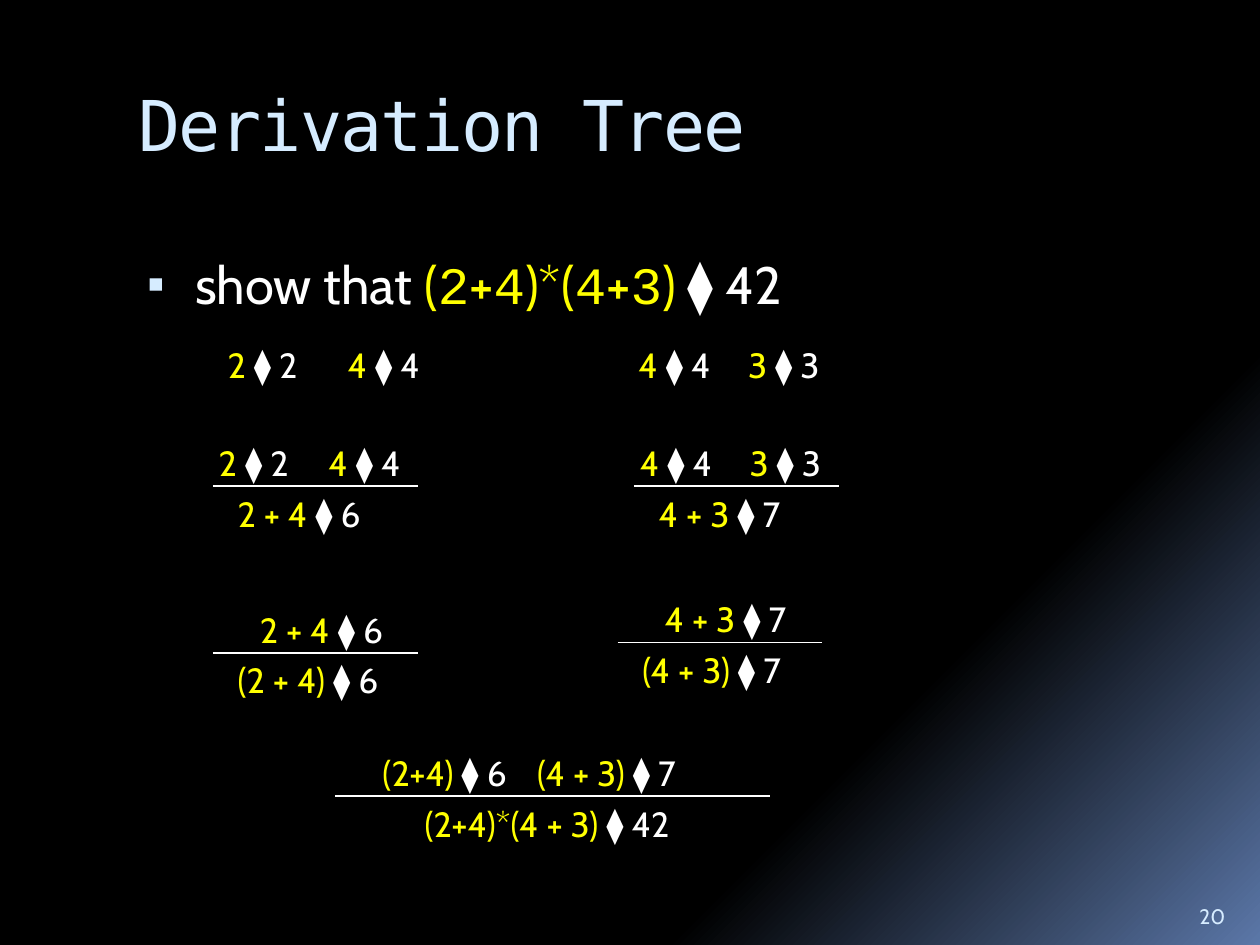
from dataclasses import dataclass
from itertools import groupby

from lxml import etree
from pptx import Presentation
from pptx import util as u
from pptx.dml.color import RGBColor
from pptx.enum import shapes, text
from pptx.oxml.ns import qn


@dataclass(frozen=True)
class Theme:
    ink: str = "FFFFFF"
    source: str = "FFFF00"
    accent: str = "D6ECFF"
    dark: str = "000000"
    glow: str = "5B77A8"
    body_font: str = "Cabin"
    title_font: str = "DejaVu Sans Mono"
    digit_font: str = "Courier New"
    title_size: int = 40
    body_size: int = 30
    rule_size: int = 20
    number_size: int = 12
    bar_width: float = 0.94


class DerivationSlide:
    def __init__(self, deck, theme):
        self.theme = theme
        self.slide = deck.slides.add_slide(deck.slide_layouts[1])

    def background(self):
        fill = self.slide.background.fill
        fill.gradient()
        fill.gradient_angle = 315
        stops = zip(fill.gradient_stops, (0.73, 1), (self.theme.dark, self.theme.glow))
        for stop, position, color in stops:
            stop.position = position
            stop.color.rgb = RGBColor.from_string(color)

    def run(self, paragraph, words, size, color, font=None):
        run = paragraph.add_run()
        run.text = words
        run.font.size = u.Pt(size)
        run.font.name = font or self.theme.body_font
        run.font.color.rgb = RGBColor.from_string(color)
        return run

    def frame(self, shape, anchor=text.MSO_ANCHOR.TOP):
        """Prepare a shape's text frame and return its first paragraph."""
        frame = shape.text_frame
        frame.word_wrap = True
        frame.auto_size = text.MSO_AUTO_SIZE.NONE
        frame.vertical_anchor = anchor
        paragraph = frame.paragraphs[0]
        paragraph.alignment = text.PP_ALIGN.LEFT
        return paragraph

    def place(self, shape, left, top, width, height):
        shape.left, shape.top = u.Cm(left), u.Cm(top)
        shape.width, shape.height = u.Cm(width), u.Cm(height)

    def title(self, words):
        heading = self.slide.shapes.title
        self.place(heading, 2.54, 1.42, 21.59, 2.54)
        paragraph = self.frame(heading)
        heading.text_frame.margin_top = u.Cm(0.23)
        run = self.run(paragraph, words, self.theme.title_size,
                       self.theme.accent, self.theme.title_font)
        run.font._element.set("spc", "-100")

    def goal(self, lead, expression, value):
        theme = self.theme
        body = self.slide.placeholders[1]
        self.place(body, 2.54, 4.95, 21.59, 1.83)
        paragraph = self.frame(body)
        paragraph.space_before = u.Pt(7)
        self.bullet(paragraph)
        self.run(paragraph, f"{lead} ", theme.body_size, theme.ink)
        for is_digit, symbols in groupby(expression, str.isdigit):
            font = theme.digit_font if is_digit else theme.body_font
            self.run(paragraph, "".join(symbols), theme.body_size, theme.source, font)
        self.run(paragraph, f" ⧫ {value}", theme.body_size, theme.ink)

    def bullet(self, paragraph):
        properties = paragraph._p.get_or_add_pPr()
        properties.set("marL", str(u.Cm(1.14)))
        properties.set("indent", str(u.Cm(-0.97)))
        color = etree.SubElement(properties, qn("a:buClr"))
        etree.SubElement(color, qn("a:srgbClr"), val=self.theme.accent)
        etree.SubElement(properties, qn("a:buSzPct"), val="95000")
        etree.SubElement(properties, qn("a:buChar"), char="▪")

    def judgements(self, parent, left, top, width, pairs, tab=None):
        """Write 'expression ⧫ value' pairs on one line, set apart by a tab stop."""
        box = parent.add_textbox(u.Cm(left), u.Cm(top), u.Cm(width), u.Cm(1.12))
        paragraph = self.frame(box)
        if tab:
            stops = etree.SubElement(paragraph._p.get_or_add_pPr(), qn("a:tabLst"))
            etree.SubElement(stops, qn("a:tab"), pos=str(u.Cm(tab)), algn="l")
        for index, (expression, value) in enumerate(pairs):
            gap = "\t" if index < len(pairs) - 1 else ""
            self.run(paragraph, f"{expression} ", self.theme.rule_size, self.theme.source)
            self.run(paragraph, f"⧫ {value}{gap}", self.theme.rule_size, self.theme.ink)

    def inference(self, left, bar_top, premises, conclusion,
                  width=4.13, premise_inset=0.7, conclusion_inset=0.25, tab=None):
        """Draw premises above a bar and the conclusion below it."""
        group = self.slide.shapes.add_group_shape().shapes
        self.judgements(group, left + premise_inset, bar_top - 1.02, width + 1,
                        premises, tab)
        self.judgements(group, left + conclusion_inset, bar_top, width + 0.4, [conclusion])
        bar = group.add_connector(shapes.MSO_CONNECTOR.STRAIGHT, u.Cm(left), u.Cm(bar_top),
                                  u.Cm(left + width), u.Cm(bar_top))
        bar.line.color.rgb = RGBColor.from_string(self.theme.ink)
        bar.line.width = u.Pt(self.theme.bar_width)
        etree.SubElement(bar._element.spPr, qn("a:effectLst"))

    def number(self, words):
        box = self.slide.shapes.add_textbox(u.Cm(23.93), u.Cm(17.83), u.Cm(1.27), u.Cm(1.02))
        paragraph = self.frame(box, text.MSO_ANCHOR.BOTTOM)
        self.run(paragraph, words, self.theme.number_size, self.theme.accent)


def main():
    deck = Presentation()
    deck.slide_width, deck.slide_height = u.Cm(25.4), u.Cm(19.05)
    page = DerivationSlide(deck, Theme())
    page.background()
    page.title("Derivation Tree")
    page.goal("show that", "(2+4)*(4+3)", 42)
    page.number("20")

    two, three, four = ("2", 2), ("3", 3), ("4", 4)
    left_sum, right_sum = ("2 + 4", 6), ("4 + 3", 7)
    right_factor = ("(4 + 3)", 7)

    for left, axiom in ((4.34, two), (6.76, four), (12.62, four), (14.83, three)):
        page.judgements(page.slide.shapes, left, 6.8, 2.5, [axiom])

    pair = dict(premise_inset=-0.13, tab=2.21)
    page.inference(4.29, 9.8, [two, four], left_sum, **pair)
    page.inference(12.78, 9.8, [four, three], right_sum, **pair)
    page.inference(4.29, 13.16, [left_sum], ("(2 + 4)", 6))
    page.inference(12.45, 12.95, [right_sum], right_factor)
    page.inference(6.76, 16.05, [("(2+4)", 6), right_factor], ("(2+4)*(4 + 3)", 42),
                   width=8.76, conclusion_inset=1.55, tab=3.12)
    deck.save("out.pptx")


if __name__ == "__main__":
    main()
